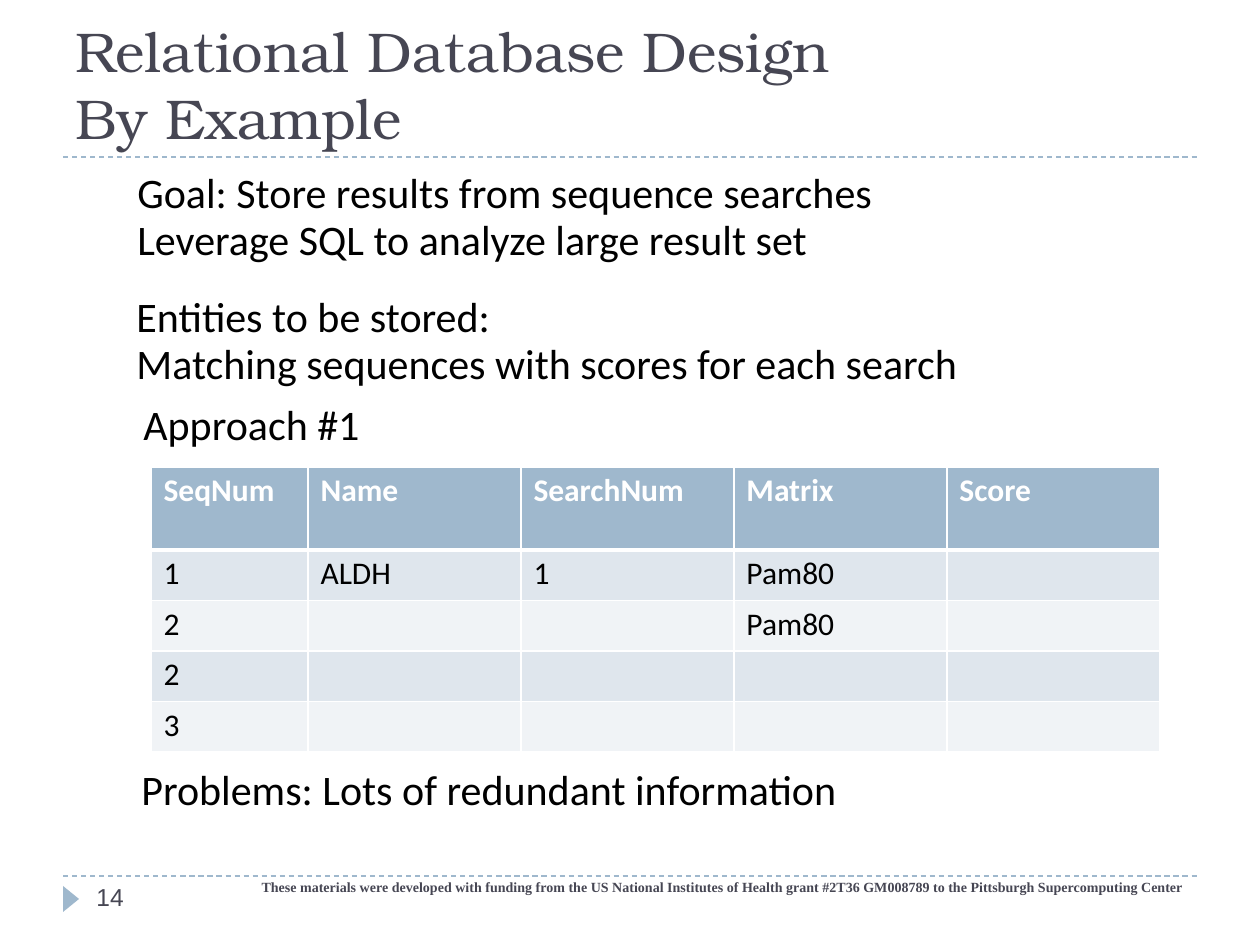
"""Build the slide on relational database design by example."""
import lxml.etree
import pptx
import pptx.dml.color
import pptx.enum.dml
import pptx.enum.shapes
import pptx.enum.text
import pptx.oxml.ns
import pptx.util

COLORS = {
    "accent": "9FB8CD",
    "heading": "464653",
    "text": "000000",
    "white": "FFFFFF",
    "odd_row": "DFE6ED",
    "even_row": "F0F3F6",
}
BODY_FONT = "Calibri"
LINE_SPACING = 0.93
ROWS = [
    ["SeqNum", "Name", "SearchNum", "Matrix", "Score"],
    ["1", "ALDH", "1", "Pam80", ""],
    ["2", "", "", "Pam80", ""],
    ["2", "", "", "", ""],
    ["3", "", "", "", ""],
]
STATEMENTS = [
    (125, 165, 779, 107, "Goal: Store results from sequence searches\n"
                         "Leverage SQL to analyze large result set"),
    (124, 289, 851, 107, "Entities to be stored:\n"
                         "Matching sequences with scores for each search"),
    (131, 397, 251, 60, "Approach #1"),
    (129, 762, 725, 60, "Problems: Lots of redundant information"),
]


def px(length):
    return pptx.util.Emu(round(length * 914400 / 126))


def rgb(name):
    return pptx.dml.color.RGBColor.from_string(COLORS[name])


class SlideBuilder:
    def __init__(self, slide):
        self.slide = slide

    def style(self, frame, size, font, color, bold=False, spacing=None, align="LEFT"):
        for para in frame.paragraphs:
            para.alignment = getattr(pptx.enum.text.PP_ALIGN, align)
            if spacing:
                para.line_spacing = spacing
            for span in para.runs:
                span.font.size = pptx.util.Pt(size)
                span.font.name = font
                span.font.bold = bold
                span.font.color.rgb = rgb(color)

    def title(self, left, top, width, height, text):
        title = self.slide.shapes.title
        title.left, title.top = px(left), px(top)
        title.width, title.height = px(width), px(height)
        frame = title.text_frame
        frame.text = text
        frame.auto_size = pptx.enum.text.MSO_AUTO_SIZE.NONE
        frame.vertical_anchor = pptx.enum.text.MSO_ANCHOR.BOTTOM
        self.style(frame, 32, "TeX Gyre Bonum", "heading")

    def text(self, left, top, width, height, text, wrap=True, **style):
        box = self.slide.shapes.add_textbox(px(left), px(top), px(width), px(height))
        box.text_frame.word_wrap = wrap
        box.text_frame.text = text
        self.style(box.text_frame, **style)

    def rule(self, left, right, top):
        line = self.slide.shapes.add_connector(
            pptx.enum.shapes.MSO_CONNECTOR.STRAIGHT, px(left), px(top), px(right), px(top))
        line.line.color.rgb = rgb("accent")
        line.line.width = pptx.util.Pt(0.75)
        line.line.dash_style = pptx.enum.dml.MSO_LINE.DASH
        lxml.etree.SubElement(line._element.spPr, pptx.oxml.ns.qn("a:effectLst"))

    def marker(self, left, top, width, height):
        shape = self.slide.shapes.add_shape(
            pptx.enum.shapes.MSO_SHAPE.ISOSCELES_TRIANGLE,
            px(left), px(top), px(width), px(height))
        shape.rotation = 90
        shape.shadow.inherit = False
        shape.fill.solid()
        shape.fill.fore_color.rgb = rgb("accent")
        shape.line.fill.background()

    def borders(self, cell, bottom):
        properties = cell._tc.get_or_add_tcPr()
        for side, points in (("L", 1), ("R", 1), ("T", 1), ("B", bottom)):
            line = lxml.etree.SubElement(
                properties, pptx.oxml.ns.qn(f"a:ln{side}"), w=str(pptx.util.Pt(points)))
            fill = lxml.etree.SubElement(line, pptx.oxml.ns.qn("a:solidFill"))
            lxml.etree.SubElement(fill, pptx.oxml.ns.qn("a:srgbClr"), val=COLORS["white"])

    def table(self, left, top, widths, heights, rows):
        table = self.slide.shapes.add_table(
            len(rows), len(widths), px(left), px(top),
            px(sum(widths)), px(sum(heights))).table
        for column, width in zip(table.columns, widths):
            column.width = px(width)
        for index, (height, values) in enumerate(zip(heights, rows)):
            table.rows[index].height = px(height)
            header = index == 0
            fill = "accent" if header else ("even_row", "odd_row")[index % 2]
            for cell, value in zip(table.rows[index].cells, values):
                cell.text = value
                self.borders(cell, 3 if header or index == 0 else 1)
                if index == 1:
                    cell._tc.tcPr.find(pptx.oxml.ns.qn("a:lnT")).set("w", str(pptx.util.Pt(3)))
                cell.fill.solid()
                cell.fill.fore_color.rgb = rgb(fill)
                self.style(cell.text_frame, 18, BODY_FONT, "white" if header else "text",
                           bold=header, spacing=LINE_SPACING)


def main():
    deck = pptx.Presentation()
    deck.slide_width, deck.slide_height = px(1260), px(945)
    builder = SlideBuilder(deck.slides.add_slide(deck.slide_layouts[5]))
    for top in (876, 157):
        builder.rule(63, 1197, top)
    builder.marker(58, 891, 26, 16)
    builder.title(63, 21, 1134, 136, "Relational Database Design \vBy Example")
    builder.text(198, 872, 999, 50,
                 "These materials were developed with funding from the US National Institutes "
                 "of Health grant #2T36 GM008789 to the Pittsburgh Supercomputing Center",
                 size=8, font="Times New Roman", color="heading", bold=True, align="RIGHT")
    builder.text(84, 876, 273, 50, "14", size=14, font="Arial", color="heading")
    builder.table(151, 467, [157] + [213] * 4, [83] + [50] * 4, ROWS)
    for left, top, width, height, text in STATEMENTS:
        builder.text(left, top, width, height, text, wrap=False, size=24,
                     font=BODY_FONT, color="text", spacing=LINE_SPACING)
    deck.save("out.pptx")


if __name__ == "__main__":
    main()
